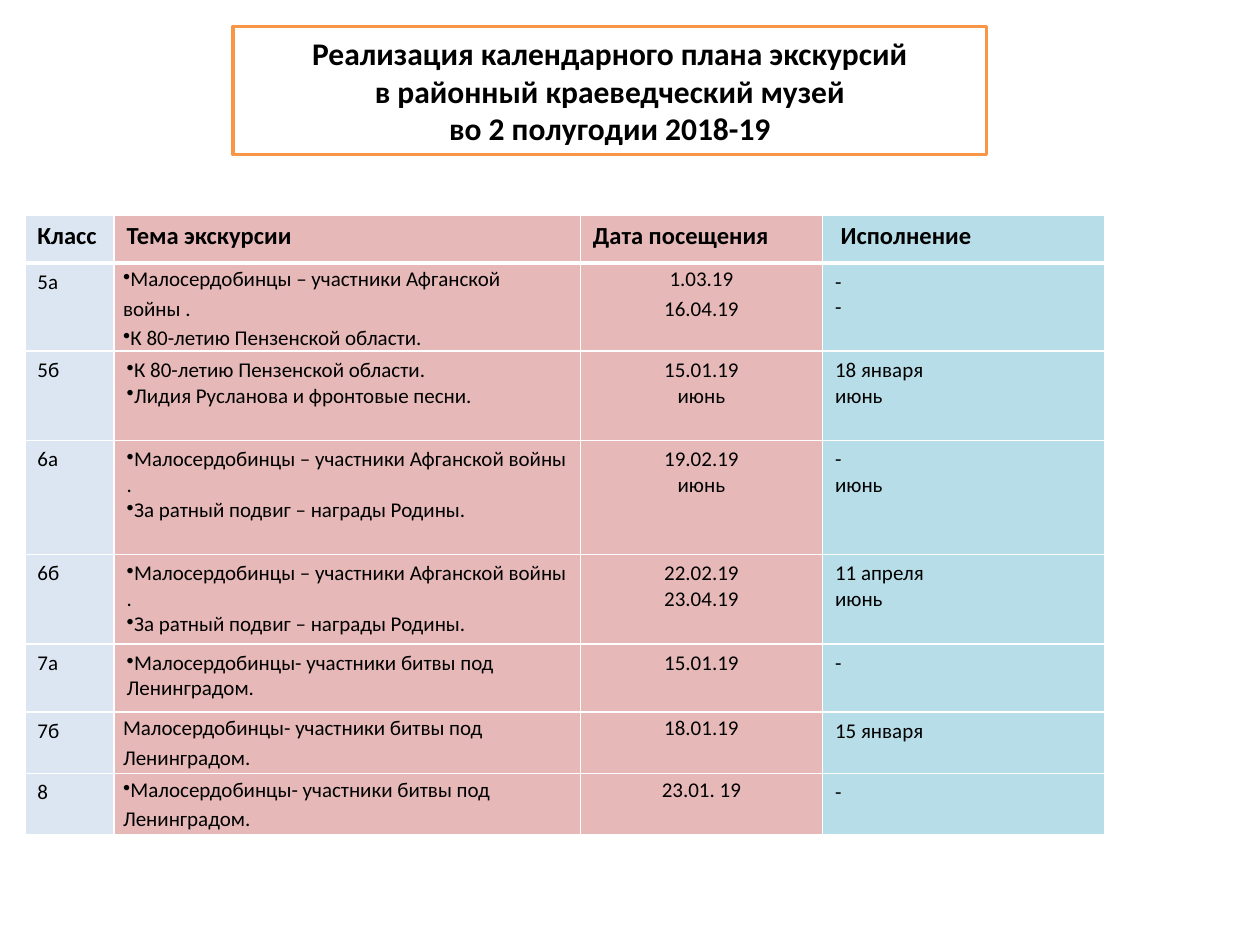
import pptx
import pptx.dml.color
import pptx.enum.text
import pptx.util
from lxml import etree
from pptx.oxml.ns import qn

Cm, Pt = pptx.util.Cm, pptx.util.Pt
RGBColor = pptx.dml.color.RGBColor
PP_ALIGN = pptx.enum.text.PP_ALIGN

BLACK = RGBColor(0x00, 0x00, 0x00)
WHITE = RGBColor(0xFF, 0xFF, 0xFF)
ORANGE = RGBColor(0xF7, 0x96, 0x46)
PALE_BLUE = RGBColor(0xDC, 0xE6, 0xF2)
PINK = RGBColor(0xE6, 0xB9, 0xB8)
AQUA = RGBColor(0xB7, 0xDE, 0xE8)

HEADING = [
    "Реализация календарного плана экскурсий",
    "в районный краеведческий музей",
    "во 2 полугодии 2018-19",
]

AFGHAN = "Малосердобинцы – участники Афганской войны ."
REGION = "К 80-летию Пензенской области."
SONGS = "Лидия Русланова и фронтовые песни."
AWARDS = "За ратный подвиг – награды Родины."
LENINGRAD = "Малосердобинцы- участники битвы под Ленинградом."

COLUMNS = [  # label, width in cm, fill
    ("Класс", 1.8, PALE_BLUE),
    ("Тема экскурсии", 9.4, PINK),
    ("Дата посещения", 4.88, PINK),
    (" Исполнение", 5.7, AQUA),
]
HEADER_HEIGHT = 0.97
EXCURSIONS = [  # height in cm, class, themes, dates, outcome
    (1.75, "5а", [AFGHAN, REGION], ["1.03.19", "16.04.19"], ["-", "-"]),
    (1.8, "5б", [REGION, SONGS], ["15.01.19", "июнь"], ["18 января", "июнь"]),
    (2.3, "6а", [AFGHAN, AWARDS], ["19.02.19", "июнь"], ["-", "июнь"]),
    (1.8, "6б", [AFGHAN, AWARDS], ["22.02.19", "23.04.19"], ["11 апреля", "июнь"]),
    (1.37, "7а", [LENINGRAD], ["15.01.19"], ["-"]),
    (1.24, "7б", [LENINGRAD], ["18.01.19"], ["15 января"]),
    (1.24, "8", [LENINGRAD], ["23.01. 19"], ["-"]),
]
TIGHT_CLASSES = {"5а", "7б", "8"}  # no vertical margins, looser lines
UNBULLETED_CLASSES = {"7б"}


def write_text(frame, lines, size=12, bold=False, align=PP_ALIGN.LEFT,
               spacing=None, bullet=None):
    """Fill a text frame with one paragraph per line."""
    for index, line in enumerate(lines):
        paragraph = frame.paragraphs[0] if index == 0 else frame.add_paragraph()
        paragraph.alignment = align
        if spacing:
            paragraph.line_spacing = spacing
        if bullet:
            properties = paragraph._p.get_or_add_pPr()
            etree.SubElement(properties, qn("a:buChar")).set("char", bullet)
        run = paragraph.add_run()
        run.text = line
        run.font.name = "Calibri"
        run.font.size = Pt(size)
        run.font.bold = bold
        run.font.color.rgb = BLACK


def format_cell(cell, fill, top=1, bottom=1):
    """Set white borders, with widths in points, then the fill."""
    properties = cell._tc.get_or_add_tcPr()
    for side, width in (("L", 1), ("R", 1), ("T", top), ("B", bottom)):
        border = etree.SubElement(properties, qn(f"a:ln{side}"), w=str(Pt(width)))
        solid = etree.SubElement(border, qn("a:solidFill"))
        etree.SubElement(solid, qn("a:srgbClr"), val=str(WHITE))
    cell.fill.solid()
    cell.fill.fore_color.rgb = fill


def add_heading(slide):
    heading = slide.shapes.title
    heading.left, heading.top = Cm(4.7), Cm(0.53)
    heading.width, heading.height = Cm(15.19), Cm(2.59)
    heading.fill.solid()
    heading.fill.fore_color.rgb = WHITE
    heading.line.color.rgb = ORANGE
    heading.line.width = Pt(2)
    frame = heading.text_frame
    frame.word_wrap = True
    frame.auto_size = pptx.enum.text.MSO_AUTO_SIZE.NONE
    frame.vertical_anchor = pptx.enum.text.MSO_ANCHOR.MIDDLE
    write_text(frame, HEADING, size=18, bold=True, align=PP_ALIGN.CENTER)


def add_schedule(slide):
    heights = [HEADER_HEIGHT] + [excursion[0] for excursion in EXCURSIONS]
    widths = [width for _, width, _ in COLUMNS]
    schedule = slide.shapes.add_table(
        len(heights), len(widths), Cm(0.5), Cm(4.33),
        Cm(sum(widths)), Cm(sum(heights))).table
    for row, height in zip(schedule.rows, heights):
        row.height = Cm(height)

    for column, (label, width, fill) in enumerate(COLUMNS):
        schedule.columns[column].width = Cm(width)
        header = schedule.cell(0, column)
        format_cell(header, fill, bottom=3)
        write_text(header.text_frame, [label], size=14, bold=True)

    for row, (_, grade, themes, dates, outcomes) in enumerate(EXCURSIONS, 1):
        tight = grade in TIGHT_CLASSES
        spacing = 1.15 if tight else None
        bullet = None if grade in UNBULLETED_CLASSES else "•"
        contents = [
            ([grade], {}),
            (themes, {"spacing": spacing, "bullet": bullet}),
            (dates, {"spacing": spacing, "align": PP_ALIGN.CENTER}),
            (outcomes, {}),
        ]
        for column, (lines, text_format) in enumerate(contents):
            cell = schedule.cell(row, column)
            format_cell(cell, COLUMNS[column][2], top=3 if row == 1 else 1)
            if tight and column in (1, 2):
                cell.margin_left = cell.margin_right = Cm(0.18)
                cell.margin_top = cell.margin_bottom = Cm(0)
            write_text(cell.text_frame, lines, **text_format)


def main():
    presentation = pptx.Presentation()
    presentation.slide_width, presentation.slide_height = Cm(25.4), Cm(19.05)
    slide = presentation.slides.add_slide(presentation.slide_layouts[5])
    add_schedule(slide)
    add_heading(slide)
    presentation.save("out.pptx")


if __name__ == "__main__":
    main()
